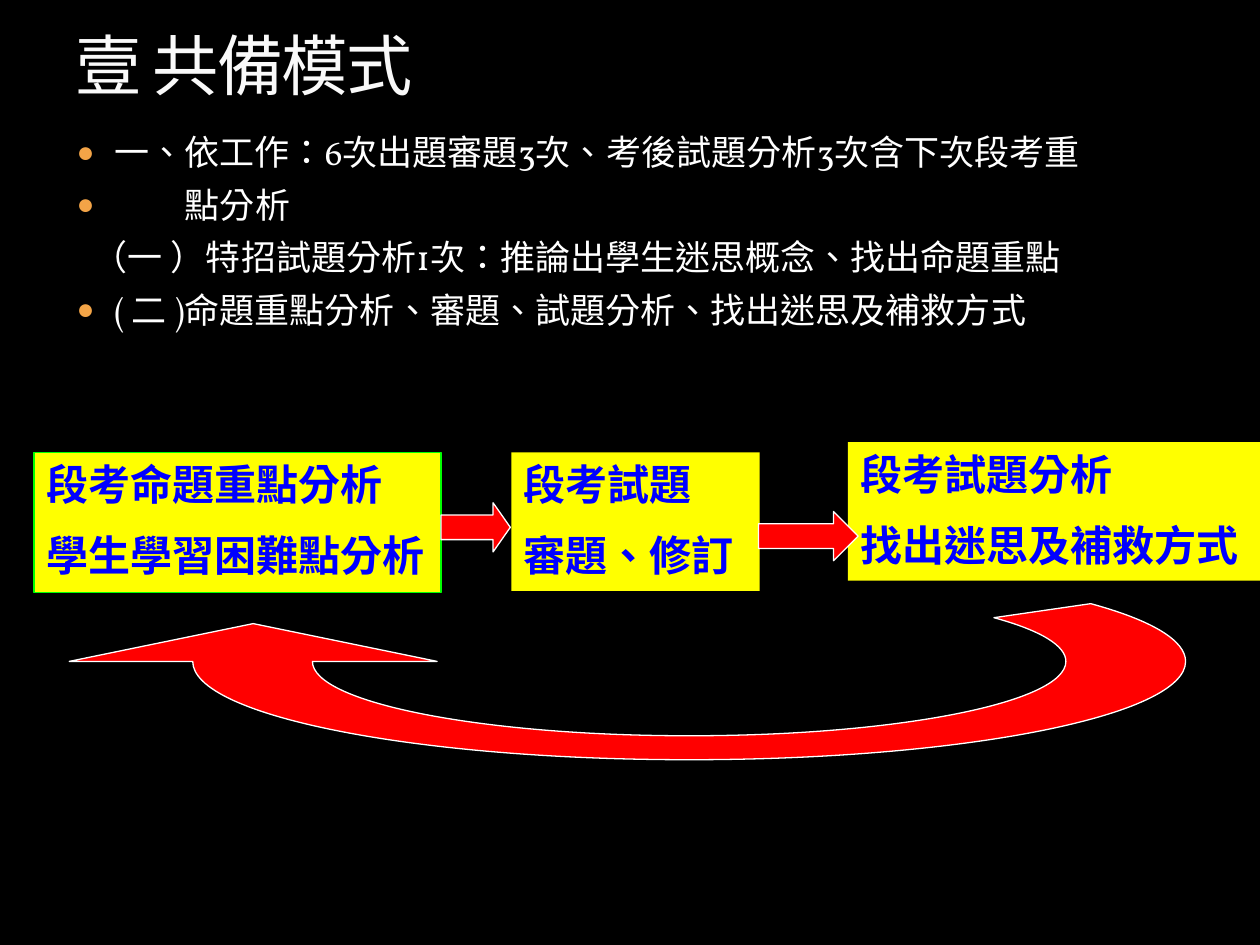
"""Build a slide on the shared exam-preparation cycle."""
import math

from lxml import etree
from pptx import Presentation
from pptx import util as u
from pptx.dml.color import RGBColor
from pptx.enum import shapes, text
from pptx.oxml import ns


def color(value):
    return RGBColor.from_string(value)


def write(para, words, font="Vollkorn", size=20, ink="FFFFFF", bold=False, before=0, tracking=0):
    para.space_before = u.Pt(before)
    span = para.add_run()
    span.text = words
    span.font.name = font
    span.font.size = u.Pt(size)
    span.font.bold = bold
    span.font.color.rgb = color(ink)
    props = span._r.get_or_add_rPr()
    props.set("lang", "zh-TW")
    if tracking:
        props.set("spc", str(tracking))


def indent(para, margin, bullet):
    props = para._p.get_or_add_pPr()
    props.set("marL", str(u.Inches(margin)))
    props.set("indent", str(-u.Inches(margin) if bullet else 0))
    if bullet:
        paint = etree.SubElement(props, ns.qn("a:buClr"))
        etree.SubElement(paint, ns.qn("a:srgbClr"), val="F3A447")
        etree.SubElement(props, ns.qn("a:buSzPct"), val="85000")
        etree.SubElement(props, ns.qn("a:buFont"), typeface="Arial")
        etree.SubElement(props, ns.qn("a:buChar"), char="●")


def arc(center, radii, angles):
    """Return Bézier points, two controls and an end for each span, after the start point."""
    def place(x, y):
        return center[0] + radii[0] * x, center[1] + radii[1] * y

    angles = [math.radians(angle) for angle in angles]
    points = [place(math.cos(angles[0]), math.sin(angles[0]))]
    for a, b in zip(angles, angles[1:]):
        k = 4 / 3 * math.tan((b - a) / 4)
        points += [place(math.cos(a) - k * math.sin(a), math.sin(a) + k * math.cos(a)),
                   place(math.cos(b) + k * math.sin(b), math.sin(b) - k * math.cos(b)),
                   place(math.cos(b), math.sin(b))]
    return points


def bend(lines):
    for first, second, third in zip(*[iter(lines)] * 3):
        curve = etree.Element(ns.qn("a:cubicBezTo"))
        first.addprevious(curve)
        for line in (first, second, third):
            curve.append(line[0])
            line.getparent().remove(line)


class Board:
    def __init__(self, deck):
        self.page = deck.slides.add_slide(deck.slide_layouts[6])
        self.back, self.box_fill, self.box_ink = "000000", "FFFF00", "0000FF"
        self.arrow_fill, self.arrow_line = "FF0000", "FFFFFF"
        self.page.background.fill.solid()
        self.page.background.fill.fore_color.rgb = color(self.back)

    def paint(self, shape, fill, line=None):
        shape.shadow.inherit = False
        shape.fill.solid()
        shape.fill.fore_color.rgb = color(fill)
        if line:
            shape.line.color.rgb = color(line)
            shape.line.width = u.Pt(0.75)
        else:
            shape.line.fill.background()

    def preset(self, kind, place):
        return self.page.shapes.add_shape(kind, *map(u.Inches, place))

    def text_frame(self, place):
        frame = self.page.shapes.add_textbox(*map(u.Inches, place)).text_frame
        frame.word_wrap = True
        return frame

    def title(self, words, place):
        frame = self.text_frame(place)
        frame.margin_top = u.Inches(0.02)
        write(frame.paragraphs[0], words, size=37.8, ink="F9F9F9", tracking=-100)

    def bullets(self, items, place):
        frame = self.text_frame(place)
        for i, (words, margin, bullet) in enumerate(items):
            para = frame.add_paragraph() if i else frame.paragraphs[0]
            write(para, words, before=6)
            indent(para, margin, bullet)

    def step(self, lines, place, line=None):
        box = self.preset(shapes.MSO_SHAPE.RECTANGLE, place)
        self.paint(box, self.box_fill, line)
        frame = box.text_frame
        frame.word_wrap = True
        frame.vertical_anchor = text.MSO_ANCHOR.TOP
        for i, words in enumerate(lines):
            para = frame.add_paragraph() if i else frame.paragraphs[0]
            para.alignment = text.PP_ALIGN.LEFT
            write(para, words, font="Arial", size=24, ink=self.box_ink, bold=True, before=12)

    def arrow(self, place, head):
        arrow = self.preset(shapes.MSO_SHAPE.RIGHT_ARROW, place)
        arrow.adjustments[0], arrow.adjustments[1] = 0.5, head
        self.paint(arrow, self.arrow_fill, self.arrow_line)

    def return_arrow(self, center, outer, inner, tail, head):
        inside = arc(center, inner, (180, 90, 0, tail))
        outside = arc(center, outer, (tail, 0, 90, 180))
        points = [(u.Inches(x), u.Inches(y)) for x, y in inside + outside + head]
        builder = self.page.shapes.build_freeform(*points[0])
        builder.add_line_segments(points[1:], close=True)
        arrow = builder.convert_to_shape()
        lines = list(arrow._element.iter(ns.qn("a:lnTo")))
        split = len(inside)
        bend(lines[:split - 1])
        bend(lines[split:split + len(outside) - 1])
        self.paint(arrow, self.arrow_fill, self.arrow_line)


def main():
    deck = Presentation()
    deck.slide_width, deck.slide_height = u.Inches(10), u.Inches(7.5)
    board = Board(deck)
    board.bullets([
        ("一、依工作：6次出題審題3次、考後試題分析3次含下次段考重", 0.3, True),
        ("點分析", 0.86, True),
        ("（一 ）特招試題分析1次：推論出學生迷思概念、找出命題重點", 0.13, False),
        ("( 二 )命題重點分析、審題、試題分析、找出迷思及補救方式", 0.3, True),
    ], (0.51, 0.99, 9, 6.14))
    board.title("壹 共備模式", (0.5, 0.17, 9, 1.33))
    board.step(["段考命題重點分析", "學生學習困難點分析"], (0.27, 3.59, 3.23, 1.11), line="00FF00")
    board.step(["段考試題", "審題、修訂"], (4.06, 3.59, 1.97, 1.1))
    board.step(["段考試題分析", "找出迷思及補救方式"], (6.73, 3.51, 3.27, 1.1))
    board.arrow((3.5, 3.99, 0.55, 0.39), 0.35)
    board.arrow((6.02, 4.06, 0.79, 0.39), 0.5)
    board.return_arrow((5.47, 5.25), (3.94, 0.78), (2.99, 0.59), -36,
                       [(0.55, 5.25), (2.01, 4.95), (3.47, 5.25)])
    deck.save("out.pptx")


if __name__ == "__main__":
    main()
